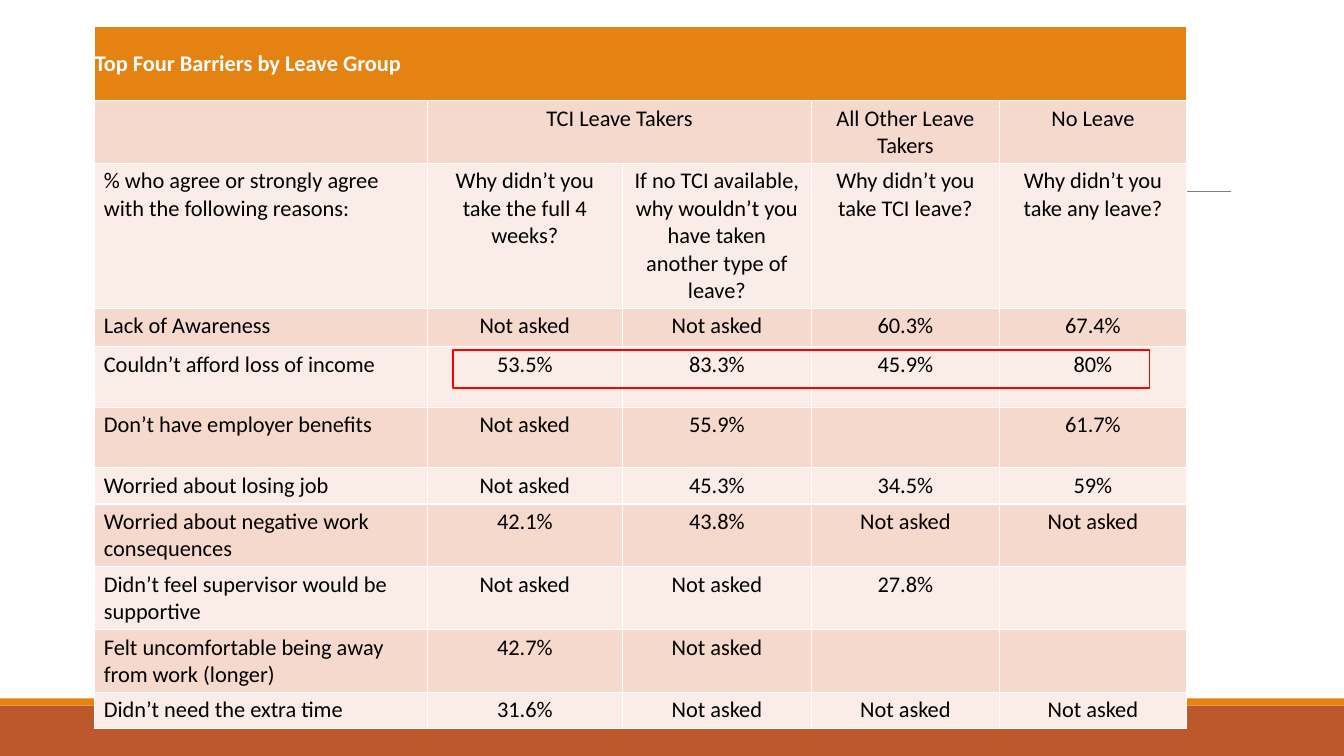
from lxml import etree
from pptx import Presentation
from pptx import util as u
from pptx.dml.color import RGBColor
from pptx.enum import shapes, text
from pptx.oxml import ns

PX = 9144  # 100 px to the inch
WIDTH, HEIGHT = 1333, 750
FONT = "Calibri"
COLORS = {
    "footer": "BD582C", "accent": "E48312", "rule": "808080",
    "dark_band": "F5D9CC", "light_band": "FAEDE7",
    "title": "FFFFFF", "body": "000000", "highlight": "FF0000",
}
COLUMN_WIDTHS = [330, 193, 188, 186, 186]
ROW_HEIGHTS = [74, 62, 142, 38, 60, 60, 36, 62, 62, 62, 36]
ASKED_NOT = "Not asked"
ROWS = [
    ["Top Four Barriers by Leave Group", "", "", "", ""],
    ["", "TCI Leave Takers", "", "All Other Leave Takers", "No Leave"],
    ["% who agree or strongly agree with the following reasons:",
     "Why didn’t you take the full 4 weeks?",
     "If no TCI available, why wouldn’t you have taken another type of leave?",
     "Why didn’t you take TCI leave?", "Why didn’t you take any leave?"],
    ["Lack of Awareness", ASKED_NOT, ASKED_NOT, "60.3%", "67.4%"],
    ["Couldn’t afford loss of income", "53.5%", "83.3%", "45.9%", "80%"],
    ["Don’t have employer benefits", ASKED_NOT, "55.9%", "", "61.7%"],
    ["Worried about losing job", ASKED_NOT, "45.3%", "34.5%", "59%"],
    ["Worried about negative work consequences", "42.1%", "43.8%", ASKED_NOT, ASKED_NOT],
    ["Didn’t feel supervisor would be supportive", ASKED_NOT, ASKED_NOT, "27.8%", ""],
    ["Felt uncomfortable being away from work (longer)", "42.7%", ASKED_NOT, "", ""],
    ["Didn’t need the extra time", "31.6%", ASKED_NOT, ASKED_NOT, ASKED_NOT],
]


def color(name):
    return RGBColor.from_string(COLORS[name])


def px(*lengths):
    return [u.Emu(length * PX) for length in lengths]


def add_rectangle(slide, box, fill=None, line=None):
    shape = slide.shapes.add_shape(shapes.MSO_SHAPE.RECTANGLE, *px(*box))
    shape.shadow.inherit = False
    if fill:
        shape.fill.solid()
        shape.fill.fore_color.rgb = color(fill)
    else:
        shape.fill.background()
    if line:
        shape.line.color.rgb = color(line)
        shape.line.width = u.Pt(1.25)
    else:
        shape.line.fill.background()


def add_footer(slide, box):
    left, top, width, height = box
    stripe = 7
    add_rectangle(slide, (left, top + stripe, width, height - stripe), fill="footer")
    add_rectangle(slide, (left, top, width, stripe), fill="accent")


def add_rule(slide, left, right, y):
    rule = slide.shapes.add_connector(shapes.MSO_CONNECTOR.STRAIGHT, *px(left, y, right, y))
    rule.line.color.rgb = color("rule")
    rule.line.width = u.Pt(0.5)
    etree.SubElement(rule._element.spPr, ns.qn("a:effectLst"))


def format_cell(cell, words, row, column):
    is_title = row == 0
    fill = "accent" if is_title else "dark_band" if row % 2 else "light_band"
    cell.fill.solid()
    cell.fill.fore_color.rgb = color(fill)
    side, edge = px(0, 0) if is_title else px(9, 4)
    cell_format = {
        "margin_left": side, "margin_right": side, "margin_top": edge, "margin_bottom": edge,
        "vertical_anchor": text.MSO_ANCHOR.MIDDLE if is_title else text.MSO_ANCHOR.TOP,
    }
    for name, value in cell_format.items():
        setattr(cell, name, value)
    if not words:
        return
    paragraph = cell.text_frame.paragraphs[0]
    paragraph.alignment = text.PP_ALIGN.CENTER if column else text.PP_ALIGN.LEFT
    paragraph.space_before = u.Pt(0.5)
    run = paragraph.add_run()
    run.text = words
    for name, value in {"name": FONT, "size": u.Pt(16), "bold": is_title}.items():
        setattr(run.font, name, value)
    run.font.color.rgb = color("title" if is_title else "body")


def add_barrier_table(slide, left, top):
    box = px(left, top, sum(COLUMN_WIDTHS), sum(ROW_HEIGHTS))
    table = slide.shapes.add_table(len(ROWS), len(COLUMN_WIDTHS), *box).table
    for column, width in zip(table.columns, px(*COLUMN_WIDTHS)):
        column.width = width
    for row, height in zip(table.rows, px(*ROW_HEIGHTS)):
        row.height = height
    table.cell(0, 0).merge(table.cell(0, 4))
    table.cell(1, 1).merge(table.cell(1, 2))
    for row, entries in enumerate(ROWS):
        for column, words in enumerate(entries):
            format_cell(table.cell(row, column), words, row, column)


def main():
    presentation = Presentation()
    presentation.slide_width, presentation.slide_height = px(WIDTH, HEIGHT)
    slide = presentation.slides.add_slide(presentation.slide_layouts[6])
    add_footer(slide, (0, 693, WIDTH, HEIGHT - 693))
    add_rule(slide, 131, 1221, 190)
    add_barrier_table(slide, 94, 26)
    add_rectangle(slide, (449, 347, 691, 38), line="highlight")
    presentation.save("out.pptx")


if __name__ == "__main__":
    main()
